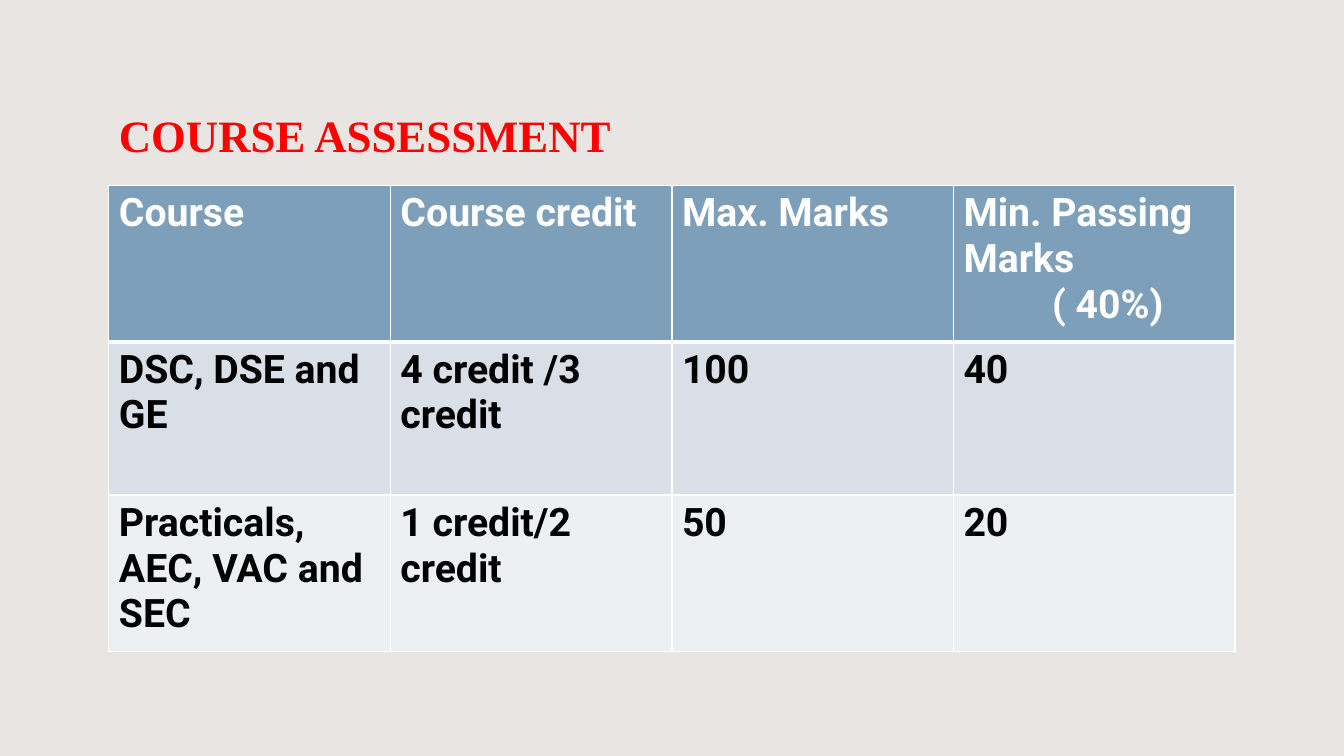
from pptx import Presentation
from pptx.dml.color import RGBColor
from pptx.enum.text import MSO_ANCHOR
from pptx.oxml.ns import qn
from pptx.util import Inches, Pt
from lxml import etree

BOTTOM = MSO_ANCHOR.BOTTOM

LEFT, WIDTH = 1.08, 11.17
ROW_HEIGHTS = [1.55, 1.52, 1.55]
ROW_FILLS = ["7E9FBA", "D8DFE7", "ECF0F3"]
ROW_TEXT_COLORS = ["FFFFFF", "000000", "000000"]
# Border widths in points: above the header, then below each row
RULE_WIDTHS = [1, 3, 1, 1]
PASSING_INDENT = 0.88

ROWS = [
    ["Course", "Course credit", "Max. Marks", "Min. Passing Marks\n( 40%)"],
    ["DSC, DSE and GE", "4 credit /3 credit", "100", "40"],
    ["Practicals, AEC, VAC and SEC", "1 credit/2 credit", "50", "20"],
]

TITLE_FORMAT = {"name": "Times New Roman", "size": Pt(32), "bold": True}
CELL_FORMAT = {"name": "Roboto", "size": Pt(28), "bold": True}


def rgb(value):
    return RGBColor.from_string(value)


def set_text(text_frame, text, text_format, color):
    text_frame.text = text
    for paragraph in text_frame.paragraphs:
        font = paragraph.runs[0].font
        for name, value in text_format.items():
            setattr(font, name, value)
        font.color.rgb = rgb(color)


def set_borders(cell, widths, color):
    properties = cell._tc.get_or_add_tcPr()
    for side, width in widths.items():
        line = etree.SubElement(properties, qn(f"a:ln{side}"), w=str(Pt(width)))
        fill = etree.SubElement(line, qn("a:solidFill"))
        etree.SubElement(fill, qn("a:srgbClr"), val=color)


def add_title(slide, text):
    title = slide.shapes.add_textbox(
        Inches(LEFT), Inches(0.43), Inches(WIDTH), Inches(1.22))
    text_frame = title.text_frame
    text_frame.word_wrap = True
    text_frame.vertical_anchor = BOTTOM
    set_text(text_frame, text, TITLE_FORMAT, "FF0000")


def add_marks_table(slide):
    columns = len(ROWS[0])
    table = slide.shapes.add_table(
        len(ROWS), columns, Inches(LEFT), Inches(1.84),
        Inches(WIDTH), Inches(sum(ROW_HEIGHTS))).table
    for column in table.columns:
        column.width = Inches(WIDTH / columns)
    for index, texts in enumerate(ROWS):
        table.rows[index].height = Inches(ROW_HEIGHTS[index])
        widths = {"L": 1, "R": 1, "T": RULE_WIDTHS[index], "B": RULE_WIDTHS[index + 1]}
        for cell, text in zip(table.rows[index].cells, texts):
            set_borders(cell, widths, "FFFFFF")
            cell.fill.solid()
            cell.fill.fore_color.rgb = rgb(ROW_FILLS[index])
            set_text(cell.text_frame, text, CELL_FORMAT, ROW_TEXT_COLORS[index])
    # Indent the percentage under the last heading
    percentage = table.cell(0, columns - 1).text_frame.paragraphs[1]
    percentage._p.get_or_add_pPr().set("marL", str(Inches(PASSING_INDENT)))


def main():
    presentation = Presentation()
    presentation.slide_width = Inches(13.33)
    presentation.slide_height = Inches(7.5)
    slide = presentation.slides.add_slide(presentation.slide_layouts[6])

    # Background
    slide.background.fill.solid()
    slide.background.fill.fore_color.rgb = rgb("E8E5E2")

    # Heading and table
    add_title(slide, "COURSE ASSESSMENT")
    add_marks_table(slide)

    presentation.save("out.pptx")


if __name__ == "__main__":
    main()
